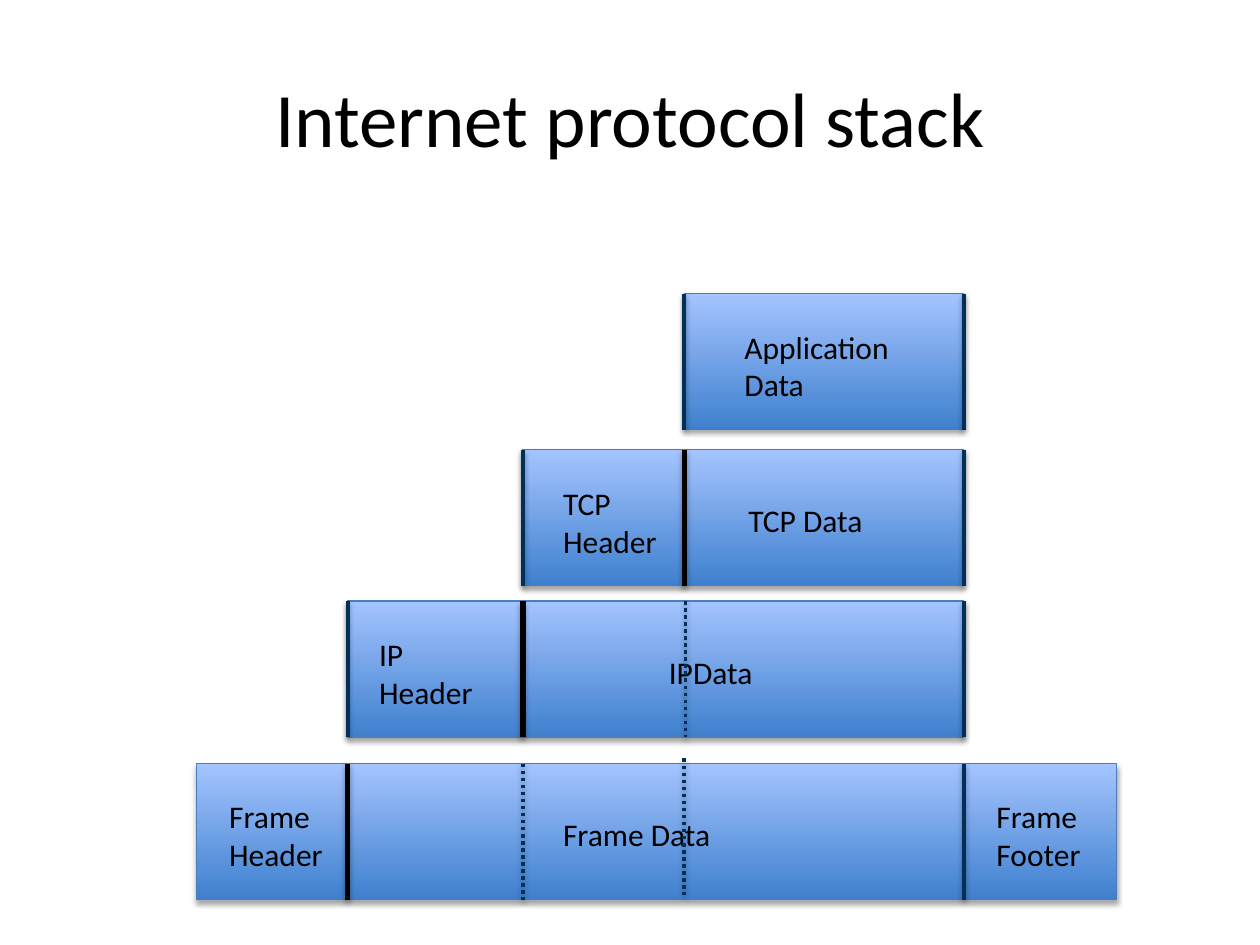
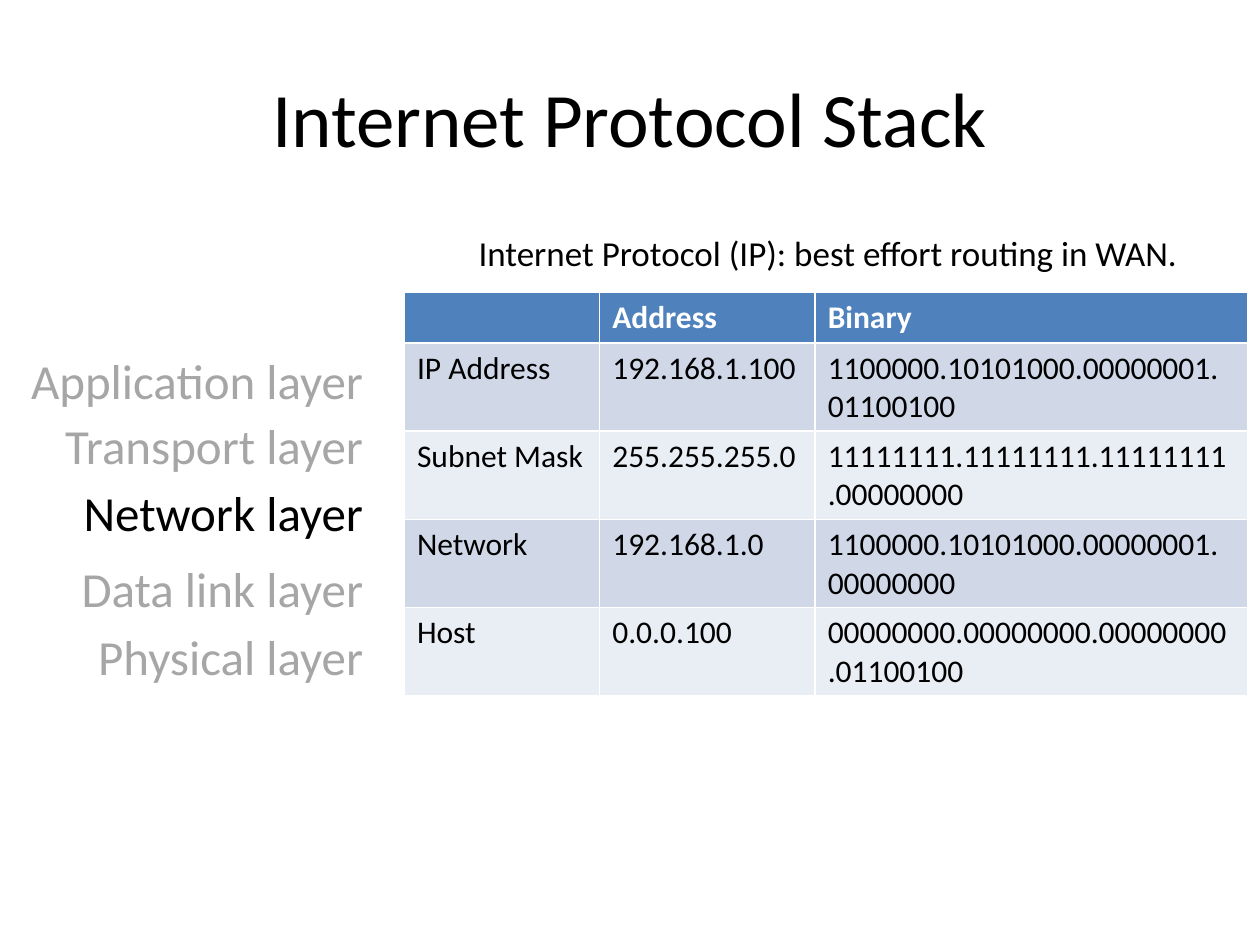
from lxml.etree import SubElement
from pptx import Presentation
from pptx.dml.color import RGBColor
from pptx.enum.dml import MSO_LINE
from pptx.enum.shapes import MSO_CONNECTOR, MSO_SHAPE
from pptx.enum.text import MSO_ANCHOR, PP_ALIGN
from pptx.oxml.ns import qn
from pptx.util import Inches, Pt

FONT = "Calibri"
BLACK = RGBColor(0x00, 0x00, 0x00)
WHITE = RGBColor(0xFF, 0xFF, 0xFF)
GREY = RGBColor(0xA6, 0xA6, 0xA6)
NAVY = RGBColor(0x00, 0x2F, 0x5A)
OUTLINE = RGBColor(0x4B, 0x7E, 0xBC)
GRADIENT = (RGBColor(0x3F, 0x80, 0xCE), RGBColor(0xA4, 0xC4, 0xFF))
HEADER_FILL = RGBColor(0x4F, 0x81, 0xBD)
ROW_FILLS = (RGBColor(0xD0, 0xD8, 0xE8), RGBColor(0xE9, 0xED, 0xF4))

FRAME_LEFT, IP_LEFT, TCP_LEFT, DATA_LEFT = 1.56, 2.76, 4.15, 5.43
DATA_RIGHT, FRAME_RIGHT = 7.65, 8.86
BAND_HEIGHT = 1.08
LABEL_WIDTH = 1.69

# Each band: top, left, right, thick divider, edges, dotted lines (x, shift), labels (text, x, width)
BANDS = [
    (6.06, FRAME_LEFT, FRAME_RIGHT, IP_LEFT, [DATA_RIGHT],
     [(DATA_LEFT, -0.04), (TCP_LEFT, 0)],
     [("Frame Data", 4.37, LABEL_WIDTH), ("Frame\nFooter", 7.81, LABEL_WIDTH),
      ("Frame\nHeader", 1.72, LABEL_WIDTH)]),
    (4.77, IP_LEFT, DATA_RIGHT, TCP_LEFT, [IP_LEFT, DATA_RIGHT],
     [(DATA_LEFT + 0.01, 0)],
     [("IPData", 5.21, LABEL_WIDTH), ("IP\nHeader", 2.91, LABEL_WIDTH)]),
    (3.57, TCP_LEFT, DATA_RIGHT, DATA_LEFT, [TCP_LEFT, DATA_RIGHT], [],
     [("TCP Data", 5.84, LABEL_WIDTH), ("TCP\nHeader", 4.37, 1.02)]),
    (2.33, DATA_LEFT, DATA_RIGHT, None, [DATA_LEFT, DATA_RIGHT], [],
     [("Application\nData", 5.81, LABEL_WIDTH)]),
]

LAYERS = [("Application layer", 2.73), ("Transport layer", 3.25), ("Network layer", 3.78),
          ("Data link layer", 4.38), ("Physical layer", 4.92)]
CURRENT_LAYER = "Network layer"

COLUMN_WIDTHS = (1.55, 1.71, 3.43)
ADDRESS_ROWS = [
    ("", "Address", "Binary"),
    ("IP Address", "192.168.1.100", "1100000.10101000.00000001.\n01100100"),
    ("Subnet Mask", "255.255.255.0", "11111111.11111111.11111111.00000000"),
    ("Network", "192.168.1.0", "1100000.10101000.00000001.00000000"),
    ("Host", "0.0.0.100", "00000000.00000000.00000000.01100100"),
]


def format_runs(text_frame, size, color, bold=False):
    """Give every run of a text frame the deck's font."""
    for paragraph in text_frame.paragraphs:
        for run in paragraph.runs:
            run.font.name = FONT
            run.font.size = Pt(size)
            run.font.bold = bold
            run.font.color.rgb = color


def add_text(slide, text, left, top, width, height, size, color=BLACK,
             align=PP_ALIGN.LEFT, anchor=MSO_ANCHOR.TOP):
    """Place one paragraph of wrapped text."""
    box = slide.shapes.add_textbox(Inches(left), Inches(top), Inches(width), Inches(height))
    text_frame = box.text_frame
    text_frame.word_wrap = True
    text_frame.vertical_anchor = anchor
    paragraph = text_frame.paragraphs[0]
    paragraph.text = text
    paragraph.alignment = align
    format_runs(text_frame, size, color)


def add_title(slide, text):
    """Place the centred slide title."""
    add_text(slide, text, 0.5, 0.3, 9, 1.25, 44,
             align=PP_ALIGN.CENTER, anchor=MSO_ANCHOR.MIDDLE)


def add_shadow(shape, distance, opacity):
    """Cast a soft shadow straight down."""
    effects = SubElement(shape._element.spPr, qn("a:effectLst"))
    shadow = SubElement(effects, qn("a:outerShdw"), blurRad=str(Pt(3.1)),
                        dist=str(Pt(distance)), dir="5400000", rotWithShape="0")
    color = SubElement(shadow, qn("a:srgbClr"), val=str(BLACK))
    SubElement(color, qn("a:alpha"), val=str(opacity * 1000))


def add_divider(slide, x, top, color=NAVY, width=2, dash=None):
    """Draw a vertical line as tall as a band."""
    line = slide.shapes.add_connector(MSO_CONNECTOR.STRAIGHT, Inches(x), Inches(top),
                                      Inches(x), Inches(top + BAND_HEIGHT))
    line.line.color.rgb = color
    line.line.width = Pt(width)
    if dash:
        line.line.dash_style = dash
    if color == BLACK:
        add_shadow(line, 1.8, 35)
    else:
        add_shadow(line, 1.6, 38)


def add_band(slide, top, left, right, divider, edges, dotted, labels):
    """Draw one protocol unit with its header, data and boundaries."""
    band = slide.shapes.add_shape(MSO_SHAPE.RECTANGLE, Inches(left), Inches(top),
                                  Inches(right - left), Inches(BAND_HEIGHT))
    band.fill.gradient()
    band.fill.gradient_angle = 90
    for stop, color, position in zip(band.fill.gradient_stops, GRADIENT, (0, 1)):
        stop.color.rgb = color
        stop.position = position
    band.line.color.rgb = OUTLINE
    band.line.width = Pt(0.75)
    add_shadow(band, 1.8, 35)
    for x in edges:
        add_divider(slide, x, top)
    if divider:
        add_divider(slide, divider, top, BLACK, 3)
    for text, x, width in labels:
        offset, height = (0.22, 0.71) if "\n" in text else (0.36, 0.4)
        add_text(slide, text, x, top + offset, width, height, 18)
    for x, shift in dotted:
        add_divider(slide, x, top + shift, dash=MSO_LINE.ROUND_DOT)


def add_layer_list(slide, left, width):
    """List the layers, with the current one in black."""
    for name, top in LAYERS:
        color = BLACK if name == CURRENT_LAYER else GREY
        add_text(slide, name, left, top, width, 0.57, 28, color, PP_ALIGN.RIGHT)


def add_address_table(slide, left, top):
    """Place the table of addresses and their binary forms."""
    table = slide.shapes.add_table(len(ADDRESS_ROWS), len(COLUMN_WIDTHS), Inches(left),
                                   Inches(top), Inches(sum(COLUMN_WIDTHS)), Inches(3.2)).table
    for column, width in zip(table.columns, COLUMN_WIDTHS):
        column.width = Inches(width)
    for row_index, values in enumerate(ADDRESS_ROWS):
        is_header = row_index == 0
        table.rows[row_index].height = Inches(0.4 if is_header else 0.7)
        for column_index, value in enumerate(values):
            cell = table.cell(row_index, column_index)
            cell.text_frame.text = value
            cell.fill.solid()
            cell.fill.fore_color.rgb = HEADER_FILL if is_header else ROW_FILLS[(row_index - 1) % 2]
            format_runs(cell.text_frame, 18, WHITE if is_header else BLACK, is_header)


def build_encapsulation_slide(slide):
    """Show how each protocol wraps the data above it."""
    add_title(slide, "Internet protocol stack")
    for band in BANDS:
        add_band(slide, *band)


def build_network_layer_slide(slide):
    """Show the network layer and its addressing."""
    add_title(slide, "Internet Protocol Stack")
    add_layer_list(slide, 0.08, 2.9)
    add_text(slide, "Internet Protocol (IP): best effort routing in WAN.", 3.7, 1.79, 5.96, 0.44, 20)
    add_address_table(slide, 3.21, 2.32)


def main():
    """Build and save the presentation."""
    presentation = Presentation()
    presentation.slide_width = Inches(10)
    presentation.slide_height = Inches(7.5)
    for build in (build_encapsulation_slide, build_network_layer_slide):
        build(presentation.slides.add_slide(presentation.slide_layouts[6]))
    presentation.save("out.pptx")


if __name__ == "__main__":
    main()
